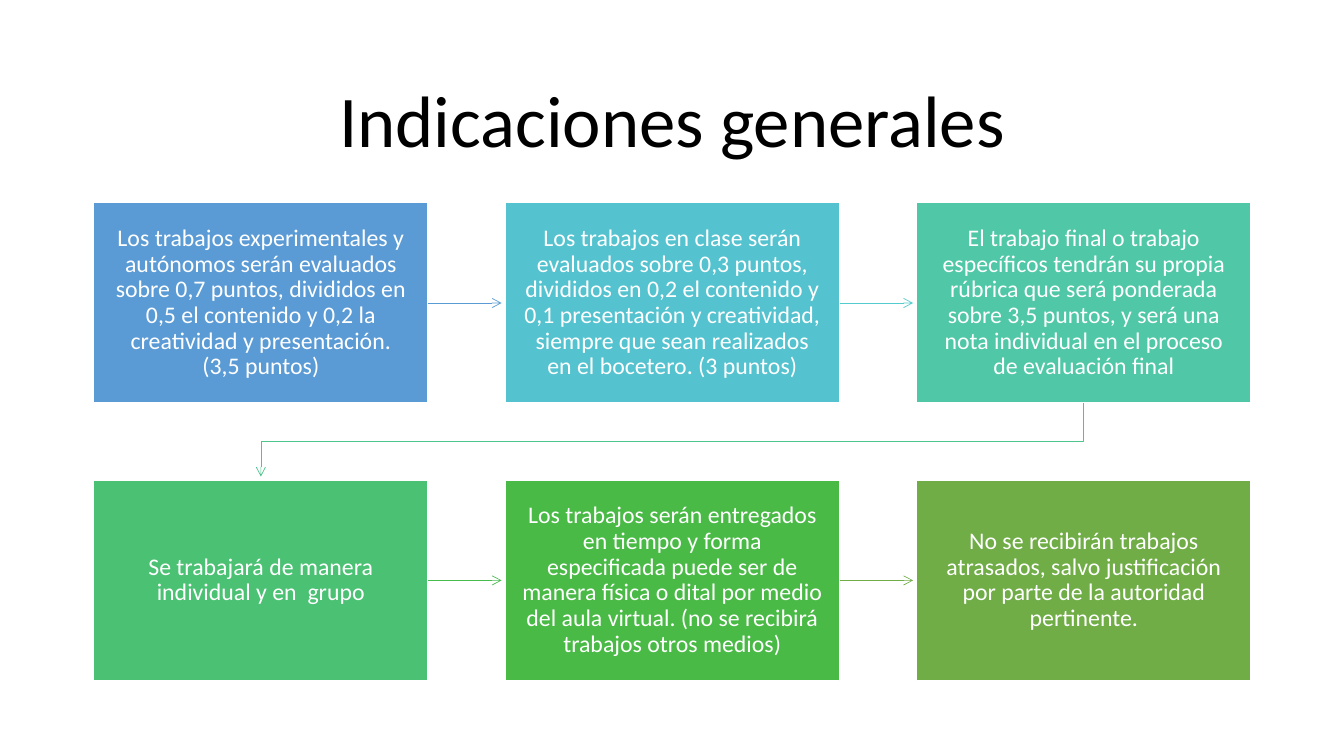
"""Build the slide of general course instructions as a six-step flow."""
from dataclasses import dataclass

from lxml.etree import SubElement
from pptx import Presentation
from pptx.dml.color import RGBColor
from pptx.enum.shapes import MSO_CONNECTOR as Connector, MSO_SHAPE as ShapeKind
from pptx.enum.text import MSO_ANCHOR as Anchor, PP_ALIGN as Align
from pptx.oxml.ns import qn
from pptx.shapes.autoshape import Shape
from pptx.slide import Slide
from pptx.util import Cm, Pt


@dataclass(frozen=True)
class Theme:
    """Colours and type sizes of the slide."""
    font: str = "Calibri"
    title_size: float = 52
    body_size: float = 17
    title_color: str = "000000"
    light: str = "FFFFFF"
    outline_width: float = 1
    arrow_width: float = 0.5


@dataclass(frozen=True)
class Step:
    """One box and the colour of the arrow that leaves it."""
    text: str
    fill: str
    arrow: str = ""


THEME = Theme()
COLUMNS = 3
LEFT, TOP = 2.36, 5.11
BOX_WIDTH, BOX_HEIGHT = 8.43, 5.05
COLUMN_STEP, ROW_STEP = 10.37, 6.99
ARROW_LENGTH = 1.85
ELBOW_DROP = 0.97
STEPS = [
    Step("Los trabajos experimentales y autónomos serán evaluados sobre 0,7 puntos, "
         "divididos en 0,5 el contenido y 0,2 la creatividad y presentación. (3,5 puntos)",
         "5B9BD5", "5B9BD5"),
    Step("Los trabajos en clase serán evaluados sobre 0,3 puntos, divididos en 0,2 el "
         "contenido y 0,1 presentación y creatividad, siempre que sean realizados en el "
         "bocetero. (3 puntos)", "55C3CF", "54CCCD"),
    Step("El trabajo final o trabajo específicos tendrán su propia rúbrica que será "
         "ponderada sobre 3,5 puntos, y será una nota individual en el proceso de "
         "evaluación final", "50C8A7", "4DC58D"),
    Step("Se trabajará de manera individual y en  grupo", "4BC174", "48BB4F"),
    Step("Los trabajos serán entregados en tiempo y forma especificada puede ser de "
         "manera física o dital por medio del aula virtual. (no se recibirá trabajos "
         "otros medios)", "4ABA46", "70AD47"),
    Step("No se recibirán trabajos atrasados, salvo justificación por parte de la "
         "autoridad pertinente.", "70AD47"),
]


def write_text(shape: Shape, text: str, size: float, color: str) -> None:
    """Set centred text in a shape and format it."""
    frame = shape.text_frame
    frame.text = text
    frame.word_wrap = True
    frame.vertical_anchor = Anchor.MIDDLE
    paragraph = frame.paragraphs[0]
    paragraph.alignment = Align.CENTER
    paragraph.line_spacing = 0.9
    font = paragraph.runs[0].font
    font.name = THEME.font
    font.size = Pt(size)
    font.color.rgb = RGBColor.from_string(color)


def add_title(slide: Slide, text: str) -> None:
    """Place and fill the title placeholder."""
    title = slide.shapes.title
    title.left, title.top, title.width, title.height = Cm(2.33), Cm(1.55), Cm(29.21), Cm(3.15)
    write_text(title, text, THEME.title_size, THEME.title_color)


def add_box(slide: Slide, index: int, step: Step) -> Shape:
    """Draw one step at its place in the grid."""
    row, column = divmod(index, COLUMNS)
    box = slide.shapes.add_shape(
        ShapeKind.RECTANGLE, Cm(LEFT + column * COLUMN_STEP), Cm(TOP + row * ROW_STEP),
        Cm(BOX_WIDTH), Cm(BOX_HEIGHT))
    box.shadow.inherit = False
    box.fill.solid()
    box.fill.fore_color.rgb = RGBColor.from_string(step.fill)
    box.line.color.rgb = RGBColor.from_string(THEME.light)
    box.line.width = Pt(THEME.outline_width)
    frame = box.text_frame
    frame.margin_left = frame.margin_right = Cm(0.41)
    frame.margin_top = frame.margin_bottom = Cm(0.43)
    write_text(box, step.text, THEME.body_size, THEME.light)
    return box


def style_arrow(arrow, color: str) -> None:
    """Give a line its colour, width and open arrowhead."""
    arrow.line.color.rgb = RGBColor.from_string(color)
    arrow.line.width = Pt(THEME.arrow_width)
    outline = arrow.element.spPr.find(qn("a:ln"))
    SubElement(outline, qn("a:tailEnd"), type="arrow")


def add_straight_arrow(slide: Slide, box: Shape, color: str) -> None:
    """Draw an arrow from the right side of a box."""
    start, middle = box.left + box.width, box.top + box.height // 2
    arrow = slide.shapes.add_connector(
        Connector.STRAIGHT, start, middle, start + Cm(ARROW_LENGTH), middle)
    arrow.begin_connect(box, 3)
    style_arrow(arrow, color)
    SubElement(arrow.element.spPr, qn("a:effectLst"))


def add_row_arrow(slide: Slide, source: Shape, target: Shape, color: str) -> None:
    """Draw the bent arrow from the end of one row to the start of the next."""
    start_x, end_x = (box.left + box.width // 2 for box in (source, target))
    start_y = source.top + source.height
    bend_y = start_y + Cm(ELBOW_DROP)
    builder = slide.shapes.build_freeform(start_x, start_y)
    builder.add_line_segments(
        [(start_x, bend_y), (end_x, bend_y), (end_x, start_y + Cm(ARROW_LENGTH))], close=False)
    arrow = builder.convert_to_shape()
    arrow.shadow.inherit = False
    arrow.fill.background()
    style_arrow(arrow, color)


def main() -> None:
    """Create and save the presentation."""
    presentation = Presentation()
    presentation.slide_width, presentation.slide_height = Cm(33.87), Cm(19.05)
    slide = presentation.slides.add_slide(presentation.slide_layouts[5])
    add_title(slide, "Indicaciones generales")
    boxes = [add_box(slide, index, step) for index, step in enumerate(STEPS)]
    for index, step in enumerate(STEPS[:-1]):
        if (index + 1) % COLUMNS:
            add_straight_arrow(slide, boxes[index], step.arrow)
        else:
            add_row_arrow(slide, boxes[index], boxes[index + 1], step.arrow)
    presentation.save("out.pptx")


if __name__ == "__main__":
    main()
